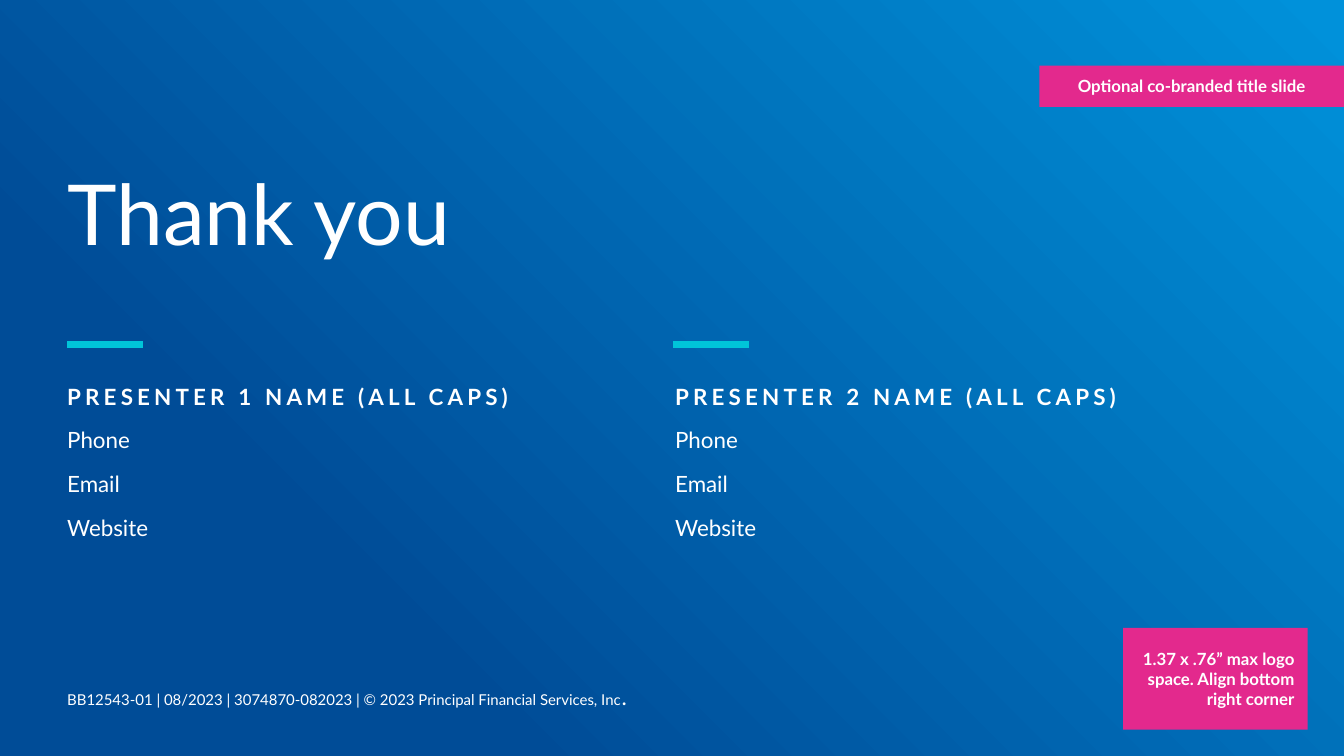
from dataclasses import dataclass

from lxml.etree import SubElement
from pptx import Presentation
from pptx.dml.color import RGBColor as RGB
from pptx.enum.shapes import MSO_CONNECTOR as CONN, MSO_SHAPE as SHAPE
from pptx.enum.text import MSO_ANCHOR as ANCHOR, MSO_AUTO_SIZE as AUTO, PP_ALIGN as ALIGN
from pptx.oxml.ns import qn
from pptx.util import Inches, Pt


@dataclass(frozen=True)
class Theme:
    font: str = "Lato"
    white: RGB = RGB(0xFF, 0xFF, 0xFF)
    navy: RGB = RGB(0x00, 0x4C, 0x97)
    sky: RGB = RGB(0x00, 0x91, 0xDA)
    teal: RGB = RGB(0x00, 0xC4, 0xD9)
    pink: RGB = RGB(0xE3, 0x29, 0x8D)
    title: float = 60
    body: float = 16
    label: float = 12
    legal: float = 10.7


T = Theme()
WIDTH, HEIGHT = 13.33, 7.5
MARGIN = WIDTH / 20
INSETS = (0.13, 0.07, 0.13, 0.07)
CONTACTS = ["Phone", "Email", "Website"]


def place(sp, box):
    """Move a shape to a box given in inches."""
    sp.left, sp.top, sp.width, sp.height = map(Inches, box)


def frame(sp, anchor, insets=(0, 0, 0, 0)):
    """Prepare the text frame of a shape and return it."""
    tf = sp.text_frame
    tf.word_wrap = True
    tf.auto_size = AUTO.NONE
    tf.vertical_anchor = anchor
    tf.margin_left, tf.margin_top, tf.margin_right, tf.margin_bottom = map(Inches, insets)
    return tf


def write(p, text, size, bold=False, spacing=0, align=ALIGN.LEFT):
    """Add a formatted run to a paragraph."""
    p.alignment = align
    r = p.add_run()
    r.text = text
    r.font.name = T.font
    r.font.size = Pt(size)
    r.font.bold = bold
    r.font.color.rgb = T.white
    if spacing:
        r.font._element.set("spc", str(spacing * 100))


def backdrop(s):
    """Fill the slide with a diagonal gradient behind everything else."""
    sp = s.shapes.add_shape(SHAPE.RECTANGLE, 0, 0, Inches(WIDTH), Inches(HEIGHT))
    sp.shadow.inherit = False
    sp.line.fill.background()
    sp.fill.gradient()
    sp.fill.gradient_angle = 45
    stops = [(0.25, T.navy), (0.99, T.sky)]
    for stop, (position, color) in zip(sp.fill.gradient_stops, stops):
        stop.position = position
        stop.color.rgb = color
    s.shapes._spTree.insert(2, sp._element)


def title(sp, box, text):
    """Set the large heading."""
    place(sp, box)
    write(frame(sp, ANCHOR.BOTTOM).paragraphs[0], text, T.title)


def accent(s, x, y, length):
    """Draw a short thick rule."""
    line = s.shapes.add_connector(CONN.STRAIGHT, *map(Inches, (x, y, x + length, y)))
    line.line.color.rgb = T.teal
    line.line.width = Pt(5)
    SubElement(line._element.spPr, qn("a:effectLst"))


def presenter(sp, box, name):
    """List a presenter's name and contact details."""
    place(sp, box)
    tf = frame(sp, ANCHOR.BOTTOM)
    for i, text in enumerate([name, *CONTACTS]):
        p = tf.paragraphs[0] if i == 0 else tf.add_paragraph()
        pPr = p._p.get_or_add_pPr()
        pPr.set("marL", "0")
        pPr.set("indent", "0")
        SubElement(pPr, qn("a:buNone"))
        p.line_spacing = 0.9
        p.space_before = Pt(12 if i else 0)
        p.space_after = Pt(2)
        write(p, text, T.body, bold=i == 0, spacing=0 if i else 3)


def tag(s, box, text, align, insets=(0, 0, 0, 0)):
    """Add a pink label."""
    sp = s.shapes.add_shape(SHAPE.RECTANGLE, *map(Inches, box))
    sp.shadow.inherit = False
    sp.fill.solid()
    sp.fill.fore_color.rgb = T.pink
    sp.line.fill.background()
    write(frame(sp, ANCHOR.MIDDLE, insets).paragraphs[0], text, T.label, bold=True, align=align)


def legal(s, box, text):
    """Add the legal line with its larger full stop."""
    sp = s.shapes.add_textbox(*map(Inches, box))
    p = frame(sp, ANCHOR.TOP, (0.13, 0, 0.13, 0)).paragraphs[0]
    write(p, text, T.legal)
    write(p, ".", T.body)


def closing_slide(prs):
    """Build the closing slide with two presenters."""
    s = prs.slides.add_slide(prs.slide_layouts[3])
    heading, *columns = s.placeholders
    backdrop(s)
    title(heading, (MARGIN, 1.18, 8.61, 1.42), "Thank you")
    for i, sp in enumerate(columns):
        accent(s, MARGIN + i * 6.01, 3.42, 0.75)
        box = (MARGIN + i * 6.03, 3.59, 5.59, 1.78)
        presenter(sp, box, f"PRESENTER {i + 1} NAME (ALL CAPS)")
    tag(s, (WIDTH - 3.02, 0.65, 3.02, 0.41), "Optional co-branded title slide", ALIGN.CENTER)
    tag(s, (11.14, 6.23, 1.83, 1.01),
        "1.37 x .76” max logo space. Align bottom right corner", ALIGN.RIGHT, INSETS)
    legal(s, (MARGIN - 0.13, 6.78, 6.29, 0.53),
          "BB12543-01 | 08/2023 | 3074870-082023 | © 2023 Principal Financial Services, Inc")


def main():
    """Create and save the presentation."""
    prs = Presentation()
    prs.slide_width, prs.slide_height = Inches(WIDTH), Inches(HEIGHT)
    closing_slide(prs)
    prs.save("out.pptx")


if __name__ == "__main__":
    main()
